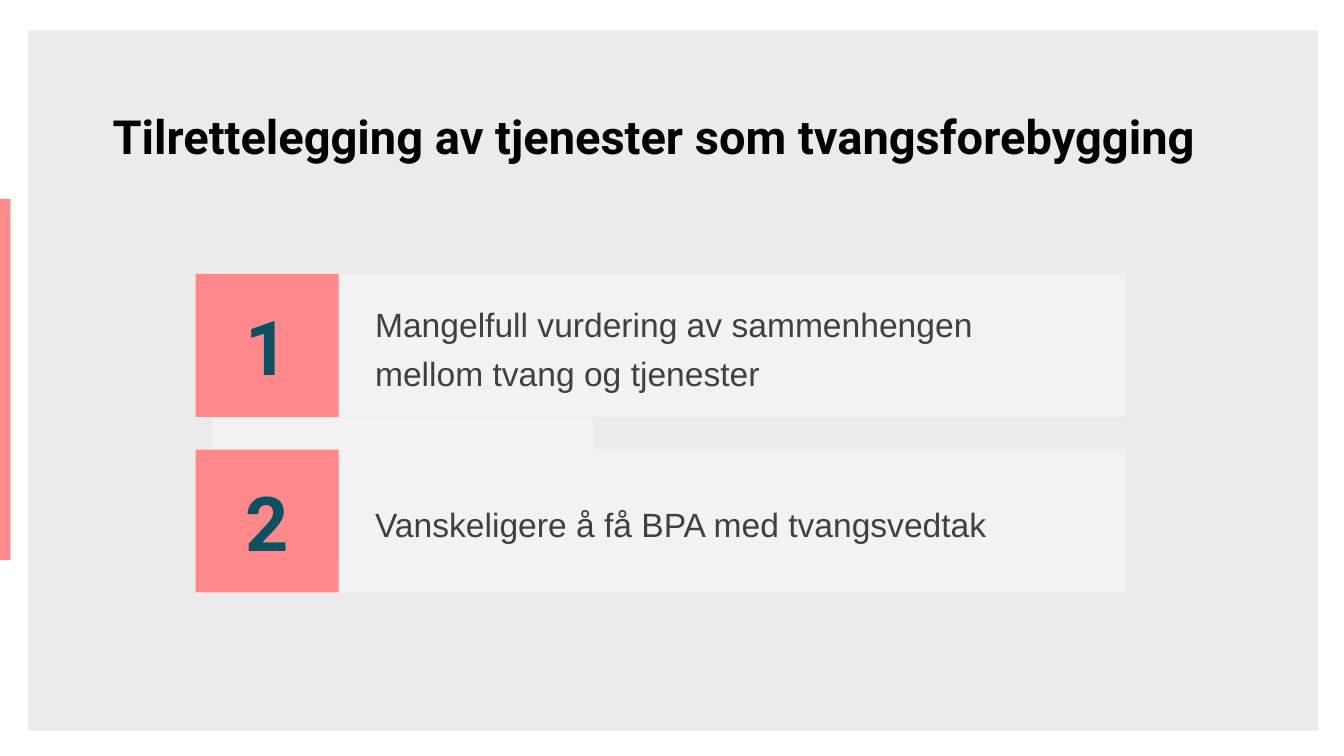
from pptx import Presentation
from pptx.dml.color import RGBColor
from pptx.enum.shapes import MSO_SHAPE
from pptx.enum.text import MSO_ANCHOR, PP_ALIGN
from pptx.util import Cm, Pt

TITLE = "Tilrettelegging av tjenester som tvangsforebygging"
POINTS = [
    ["Mangelfull vurdering av sammenhengen", "mellom tvang og tjenester"],
    ["Vanskeligere å få BPA med tvangsvedtak"],
]

WHITE = RGBColor(0xFF, 0xFF, 0xFF)
PANEL = RGBColor(0xEB, 0xEB, 0xEB)
CARD = RGBColor(0xF2, 0xF2, 0xF2)
CORAL = RGBColor(0xFF, 0x88, 0x8A)
TEAL = RGBColor(0x0B, 0x51, 0x62)
BLACK = RGBColor(0, 0, 0)
GREY = RGBColor(0x40, 0x40, 0x40)

LEFT, TOP, SIDE, PITCH = 3.7, 5.18, 2.7, 3.32
CARD_WIDTH = 14.88

prs = Presentation()
prs.slide_width, prs.slide_height = Cm(25.4), Cm(14.29)
s = prs.slides.add_slide(prs.slide_layouts[6])
s.background.fill.solid()
s.background.fill.fore_color.rgb = WHITE


def add_rect(x, y, w, h, color):
    sp = s.shapes.add_shape(MSO_SHAPE.RECTANGLE, Cm(x), Cm(y), Cm(w), Cm(h))
    sp.shadow.inherit = False
    sp.fill.solid()
    sp.fill.fore_color.rgb = color
    sp.line.fill.background()
    return sp


def write(sp, lines, size, font, color, bold=False, align=PP_ALIGN.LEFT,
          gap=0, inset=0.25, top=0.13):
    tf = sp.text_frame
    tf.word_wrap = True
    tf.vertical_anchor = MSO_ANCHOR.MIDDLE
    tf.margin_left, tf.margin_right = Cm(inset), Cm(0.2)
    tf.margin_top, tf.margin_bottom = Cm(top), Cm(0.13)
    for i, line in enumerate(lines):
        p = tf.add_paragraph() if i else tf.paragraphs[0]
        p.alignment = align
        if i:
            p.space_before = Pt(gap)
        r = p.add_run()
        r.text = line
        r.font.size, r.font.name, r.font.bold = Pt(size), font, bold
        r.font.color.rgb = color


add_rect(0.53, 0.58, 24.38, 13.23, PANEL)
add_rect(0, 3.76, 0.2, 6.83, CORAL)

title = s.shapes.add_textbox(Cm(1.88), Cm(1.3), Cm(21.36), Cm(2.54))
write(title, [TITLE], 25.2, "Roboto", BLACK, bold=True)

add_rect(4, 7.9, 7.21, 2.7, CARD)

for i, lines in enumerate(POINTS):
    y = TOP + i * PITCH
    card = add_rect(LEFT + SIDE, y, CARD_WIDTH, SIDE, CARD)
    write(card, lines, 18, "Arial", GREY, gap=4.3, inset=0.69, top=0.25)
    badge = add_rect(LEFT, y, SIDE, SIDE, CORAL)
    write(badge, [str(i + 1)], 40.5, "Roboto", TEAL, bold=True,
          align=PP_ALIGN.CENTER, inset=0.2)

prs.save("out.pptx")
